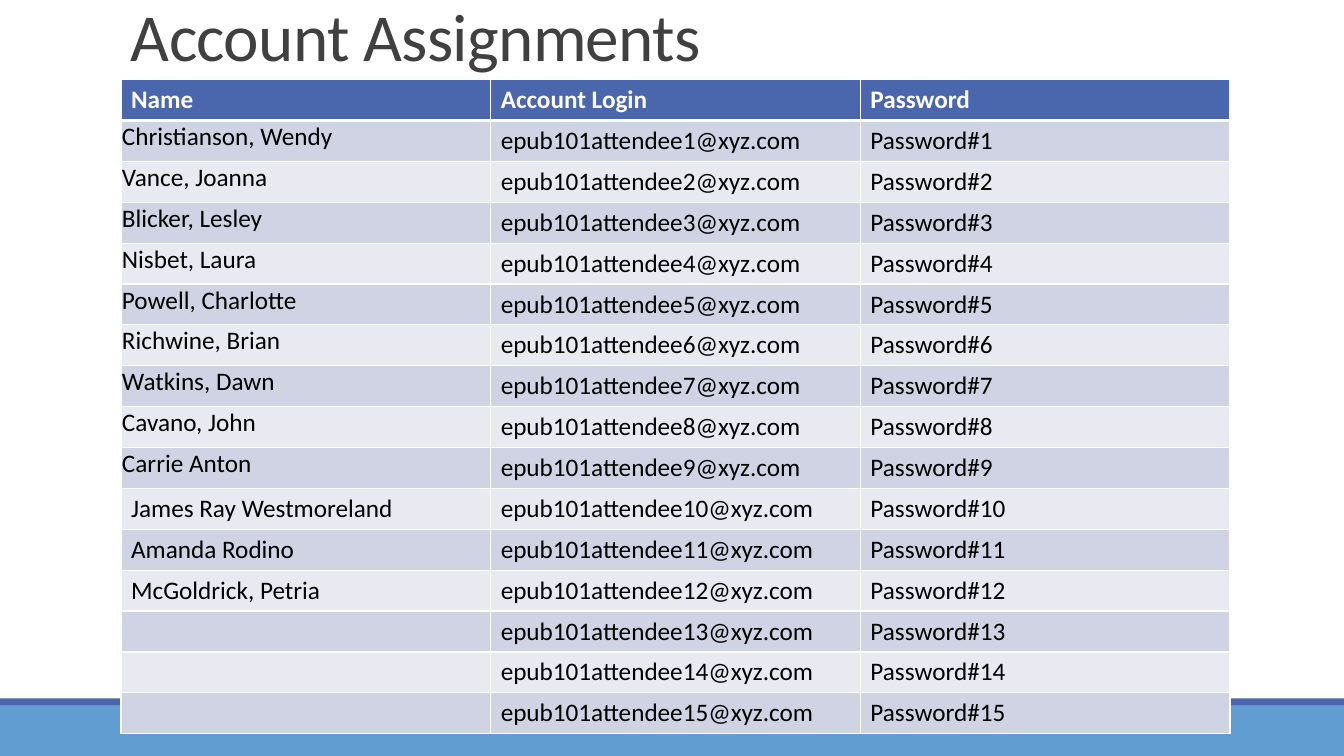
from lxml import etree
from pptx import Presentation
from pptx import util as u
from pptx.dml.color import RGBColor
from pptx.enum import shapes, text
from pptx.oxml import ns

NAMES = ["Christianson, Wendy", "Vance, Joanna", "Blicker, Lesley",
         "Nisbet, Laura", "Powell, Charlotte", "Richwine, Brian",
         "Watkins, Dawn", "Cavano, John", "Carrie Anton",
         "James Ray Westmoreland", "Amanda Rodino", "McGoldrick, Petria",
         "", "", ""]
TIGHT = 9


def color(code):
    return RGBColor.from_string(code)


class Deck:
    font = "Calibri"
    blue, sky, white = "4A66AC", "629DD1", "FFFFFF"
    bands = ["D0D3E3", "E9EAF1"]

    def __init__(self):
        self.prs = Presentation()
        self.prs.slide_width = u.Inches(13.33)
        self.prs.slide_height = u.Inches(7.5)
        self.slide = self.prs.slides.add_slide(self.prs.slide_layouts[6])

    def run(self, para, words, size, ink, bold=False):
        run = para.add_run()
        run.text = words
        run.font.name = self.font
        run.font.size = u.Pt(size)
        run.font.bold = bold
        run.font.color.rgb = color(ink)
        return run

    def bar(self, top, height, fill):
        bar = self.slide.shapes.add_shape(
            shapes.MSO_SHAPE.RECTANGLE, 0, u.Inches(top),
            self.prs.slide_width, u.Inches(height))
        bar.shadow.inherit = False
        bar.fill.solid()
        bar.fill.fore_color.rgb = color(fill)
        bar.line.fill.background()

    def title(self, words, left, top, width, height):
        box = self.slide.shapes.add_textbox(
            *map(u.Inches, (left, top, width, height)))
        frame = box.text_frame
        frame.word_wrap = True
        frame.vertical_anchor = text.MSO_ANCHOR.BOTTOM
        para = frame.paragraphs[0]
        para.line_spacing = 0.85
        run = self.run(para, words, 48, "404040")
        run.font._element.set("spc", "-50")

    def edge(self, cell, side, width):
        props = cell._tc.get_or_add_tcPr()
        line = etree.SubElement(props, ns.qn("a:ln" + side),
                                w=str(u.Pt(width)))
        fill = etree.SubElement(line, ns.qn("a:solidFill"))
        etree.SubElement(fill, ns.qn("a:srgbClr"), val=self.white)

    def cell(self, cell, words, row, tight):
        for side in "LRTB":
            thick = (row, side) in ((0, "B"), (1, "T"))
            self.edge(cell, side, 3 if thick else 1)
        cell.fill.solid()
        fill = self.bands[(row - 1) % 2] if row else self.blue
        cell.fill.fore_color.rgb = color(fill)
        if tight:
            cell.margin_left = cell.margin_right = u.Inches(0.01)
            cell.margin_top = u.Inches(0.01)
            cell.margin_bottom = 0
        if words:
            ink = "000000" if row else self.white
            self.run(cell.text_frame.paragraphs[0], words, 18, ink, row == 0)

    def table(self, rows, left, top, width, height):
        table = self.slide.shapes.add_table(
            len(rows), len(rows[0]),
            *map(u.Inches, (left, top, width, height))).table
        for r, row in enumerate(rows):
            table.rows[r].height = u.Inches(height / len(rows))
            for c, words in enumerate(row):
                tight = c == 0 and 1 <= r <= TIGHT
                self.cell(table.cell(r, c), words, r, tight)


def main():
    deck = Deck()
    deck.bar(7, 0.5, deck.sky)
    deck.bar(6.93, 0.07, deck.blue)
    deck.title("Account Assignments", 1.2, -0.79, 11, 1.59)
    rows = [("Name", "Account Login", "Password")]
    for n, name in enumerate(NAMES, 1):
        rows.append((name, f"epub101attendee{n}@xyz.com", f"Password#{n}"))
    deck.table(rows, 1.2, 0.79, 11, 6.49)
    deck.prs.save("out.pptx")


if __name__ == "__main__":
    main()
